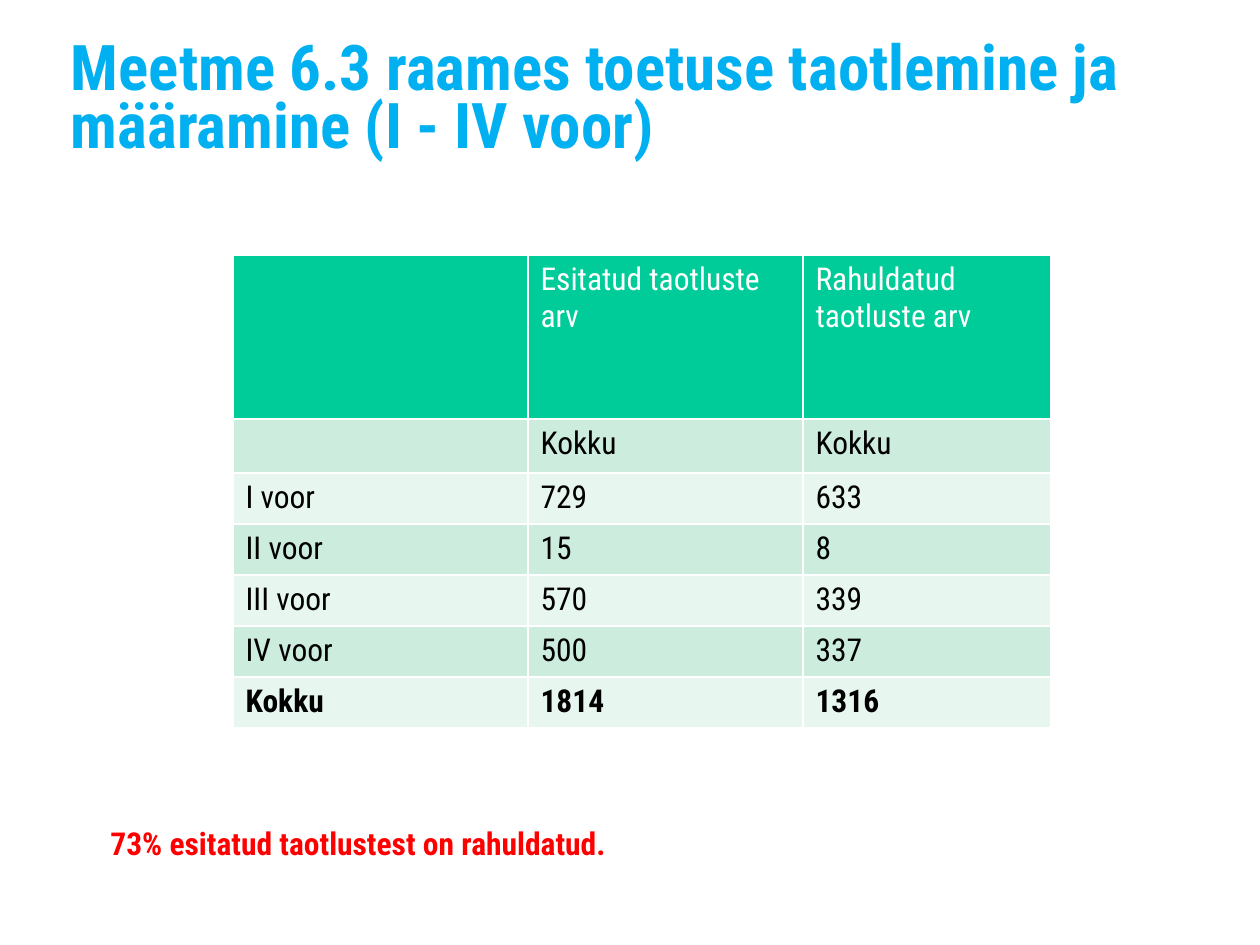
"""Build the slide on support applications and awards under measure 6.3."""
import pptx
import pptx.dml.color
import pptx.enum.text
import pptx.util

TITLE = "Meetme 6.3 raames toetuse taotlemine ja määramine (I - IV voor)"
ROWS = [
    ("", "Esitatud taotluste arv", "Rahuldatud taotluste arv"),
    ("", "Kokku", "Kokku"),
    ("I voor", "729", "633"),
    ("II voor", "15", "8"),
    ("III voor", "570", "339"),
    ("IV voor", "500", "337"),
    ("Kokku", "1814", "1316"),
]
CONCLUSION = "73% esitatud taotlustest on rahuldatud."

THEME = {
    "font": "Roboto Condensed",
    "title_size": 36,
    "body_size": 18,
    "title": "00B0F0",
    "header_text": "FFFFFF",
    "text": "000000",
    "conclusion": "FF0000",
    "header_fill": "00CC99",
    "band_fills": ("E7F6EF", "CCECDE"),
}

SCALE = 914400 // 126
SLIDE_SIZE = (1260, 945)
TITLE_BOX = (71, 15, 1114, 174)
TABLE_ORIGIN = (233, 255)
COLUMN_WIDTHS = [295, 275, 248]
ROW_HEIGHTS = [164, 54] + [51] * 5
CONCLUSION_BOX = (98, 820, 525, 50)


def px(*lengths):
    return [pptx.util.Emu(length * SCALE) for length in lengths]


def color(name):
    return pptx.dml.color.RGBColor.from_string(name)


def write(frame, text, *, size=THEME["body_size"], fill=THEME["text"], bold=False, spacing=None):
    paragraph = frame.paragraphs[0]
    paragraph.alignment = pptx.enum.text.PP_ALIGN.LEFT
    paragraph.line_spacing = spacing
    run = paragraph.add_run()
    run.text = text
    run.font.name = THEME["font"]
    run.font.size = pptx.util.Pt(size)
    run.font.bold = bold
    run.font.color.rgb = color(fill)


def add_title(slide):
    title = slide.shapes.title
    title.left, title.top, title.width, title.height = px(*TITLE_BOX)
    frame = title.text_frame
    frame.margin_left = frame.margin_top = frame.margin_right = frame.margin_bottom = 0
    frame.vertical_anchor = pptx.enum.text.MSO_ANCHOR.MIDDLE
    frame.auto_size = pptx.enum.text.MSO_AUTO_SIZE.NONE
    write(frame, TITLE, size=THEME["title_size"], fill=THEME["title"], bold=True, spacing=0.77)


def add_applications_table(slide):
    box = px(*TABLE_ORIGIN, sum(COLUMN_WIDTHS), sum(ROW_HEIGHTS))
    table = slide.shapes.add_table(len(ROWS), len(COLUMN_WIDTHS), *box).table
    for column, width in zip(table.columns, px(*COLUMN_WIDTHS)):
        column.width = width
    for row, height in zip(table.rows, px(*ROW_HEIGHTS)):
        row.height = height
    for row_index, values in enumerate(ROWS):
        is_header = row_index == 0
        row_fill = THEME["header_fill"] if is_header else THEME["band_fills"][row_index % 2]
        text_fill = THEME["header_text"] if is_header else THEME["text"]
        for column_index, value in enumerate(values):
            cell = table.cell(row_index, column_index)
            cell.fill.solid()
            cell.fill.fore_color.rgb = color(row_fill)
            if value:
                write(cell.text_frame, value, fill=text_fill, bold=row_index == len(ROWS) - 1)


def add_conclusion(slide):
    frame = slide.shapes.add_textbox(*px(*CONCLUSION_BOX)).text_frame
    frame.word_wrap = False
    frame.auto_size = pptx.enum.text.MSO_AUTO_SIZE.SHAPE_TO_FIT_TEXT
    write(frame, CONCLUSION, fill=THEME["conclusion"], bold=True, spacing=0.97)


def main():
    presentation = pptx.Presentation()
    presentation.slide_width, presentation.slide_height = px(*SLIDE_SIZE)
    slide = presentation.slides.add_slide(presentation.slide_layouts.get_by_name("Title Only"))
    add_title(slide)
    add_applications_table(slide)
    add_conclusion(slide)
    presentation.save("out.pptx")


if __name__ == "__main__":
    main()
